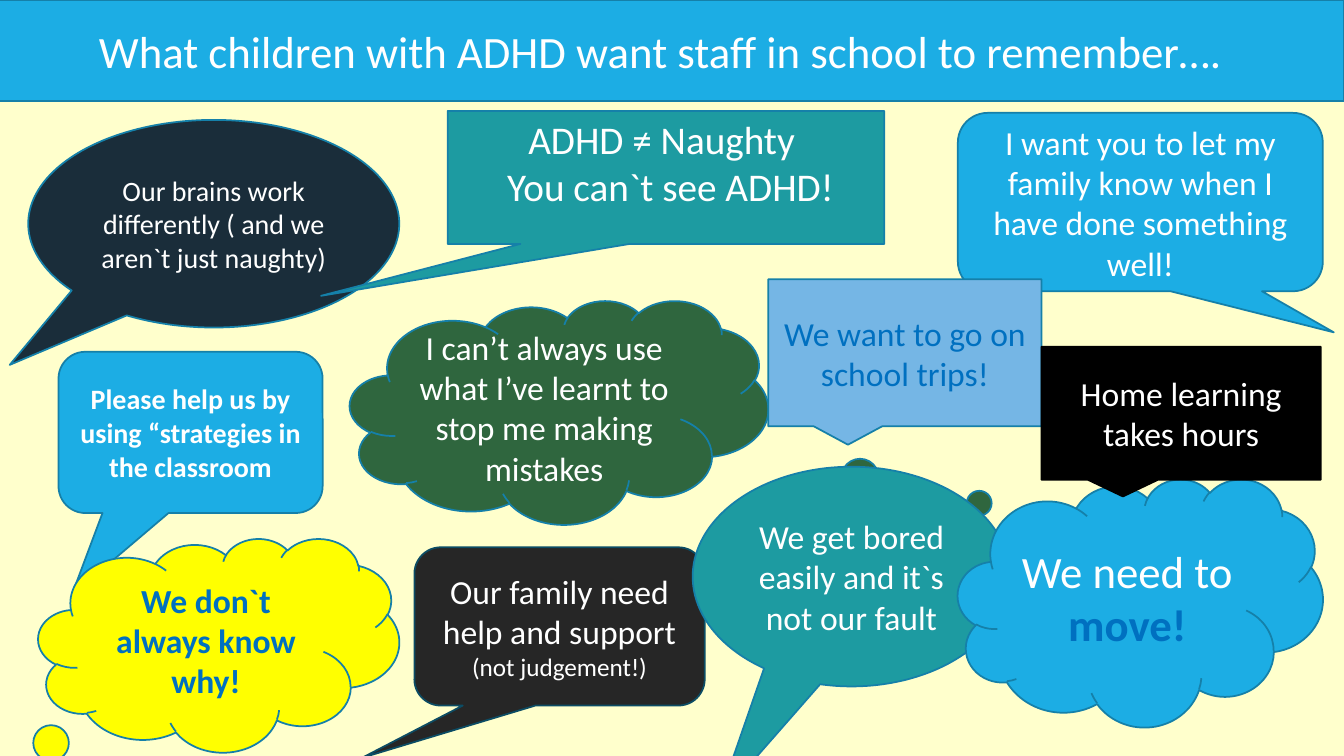
from pptx import Presentation
from pptx.dml.color import RGBColor
from pptx.enum.shapes import MSO_SHAPE
from pptx.enum.text import MSO_ANCHOR, PP_ALIGN
from pptx.util import Inches, Pt

RECTANGLE = MSO_SHAPE.RECTANGLE
BOX_CALLOUT = MSO_SHAPE.RECTANGULAR_CALLOUT
ROUND_CALLOUT = MSO_SHAPE.ROUNDED_RECTANGULAR_CALLOUT
OVAL_CALLOUT = MSO_SHAPE.OVAL_CALLOUT
CLOUD_CALLOUT = MSO_SHAPE.CLOUD_CALLOUT
CENTER = PP_ALIGN.CENTER
MIDDLE = MSO_ANCHOR.MIDDLE

CREAM = RGBColor(0xFF, 0xFF, 0xCC)
WHITE = RGBColor(0xFF, 0xFF, 0xFF)
BLACK = RGBColor(0x00, 0x00, 0x00)
SKY = RGBColor(0x1C, 0xAD, 0xE4)
OUTLINE = RGBColor(0x15, 0x80, 0xA9)
DARK_OUTLINE = RGBColor(0x0C, 0x4C, 0x64)
NAVY = RGBColor(0x1A, 0x2D, 0x3A)
GREEN = RGBColor(0x2F, 0x66, 0x3E)
TEAL = RGBColor(0x1D, 0x9B, 0xA1)
YELLOW = RGBColor(0xFF, 0xFF, 0x00)
CHARCOAL = RGBColor(0x26, 0x26, 0x26)
PALE_BLUE = RGBColor(0x75, 0xB6, 0xE5)
BLUE = RGBColor(0x00, 0x70, 0xC0)
FONT = "Calibri"


def add_bubble(page, kind, place, fill, tail=(), line=OUTLINE):
    box = page.shapes.add_shape(kind, *(Inches(length) for length in place))
    for index, value in enumerate(tail):
        box.adjustments[index] = value
    box.shadow.inherit = False
    box.fill.solid()
    box.fill.fore_color.rgb = fill
    box.line.color.rgb = line
    box.line.width = Pt(1.25)
    box.text_frame.word_wrap = True
    box.text_frame.vertical_anchor = MIDDLE
    box.text_frame.paragraphs[0].alignment = CENTER
    return box


def add_line(box):
    para = box.text_frame.add_paragraph()
    para.alignment = CENTER
    return para


def write(para, text, size=24, color=WHITE, bold=False):
    span = para.add_run()
    span.text = text
    span.font.name = FONT
    span.font.size = Pt(size)
    span.font.color.rgb = color
    span.font.bold = bold


def add_speech(page, kind, place, fill, text, tail=(), line=OUTLINE, **text_format):
    box = add_bubble(page, kind, place, fill, tail, line)
    write(box.text_frame.paragraphs[0], text, **text_format)
    return box


def main():
    deck = Presentation()
    deck.slide_width = Inches(13.33)
    deck.slide_height = Inches(7.5)
    page = deck.slides.add_slide(deck.slide_layouts[6])
    page.background.fill.solid()
    page.background.fill.fore_color.rgb = CREAM

    add_speech(page, RECTANGLE, (-0.12, 0, 13.45, 1), SKY,
               "What children with ADHD want staff in school to remember…. ", size=32)
    add_speech(page, OVAL_CALLOUT, (0.28, 1.19, 3.68, 2.06), NAVY,
               "Our brains work differently ( and we aren`t just naughty)",
               tail=(-0.55, 0.68), size=20)
    add_speech(page, ROUND_CALLOUT, (0.58, 3.49, 2.62, 1.6), SKY,
               "Please help us by using “strategies in the classroom",
               tail=(-0.45, 1.01), size=20, bold=True)
    add_speech(page, CLOUD_CALLOUT, (3.47, 2.98, 4.15, 2.22), GREEN,
               "I can’t always use what I’ve learnt to stop me making mistakes",
               tail=(1.26, 0.51))
    add_speech(page, ROUND_CALLOUT, (9.5, 1.12, 3.62, 1.77), SKY,
               "I want you to let my family know when I have done something well!",
               tail=(0.53, 0.73))

    naughty = add_speech(page, BOX_CALLOUT, (4.44, 1.1, 4.33, 1.32), TEAL,
                         "ADHD ≠ Naughty ", tail=(-0.79, 0.89), size=28)
    write(add_line(naughty), " You can`t see ADHD!", size=28)
    naughty.text_frame.margin_bottom = Inches(0.35)

    add_speech(page, CLOUD_CALLOUT, (0.38, 5.34, 3.58, 2.12), YELLOW,
               "We don`t always know why!", tail=(-0.71, 0.7), color=BLUE, bold=True)

    family = add_speech(page, ROUND_CALLOUT, (4.11, 5.43, 2.88, 1.57), CHARCOAL,
                        "Our family need help and support",
                        tail=(-0.68, 0.83), line=DARK_OUTLINE)
    write(add_line(family), "(not judgement!)", size=18)

    add_speech(page, BOX_CALLOUT, (7.62, 2.77, 2.71, 1.46), PALE_BLUE,
               "We want to go on school trips!", color=BLUE)
    add_speech(page, OVAL_CALLOUT, (6.87, 4.63, 3.15, 2.18), TEAL,
               "We get bored easily and it`s not our fault", tail=(-0.42, 1.02))

    move = add_speech(page, CLOUD_CALLOUT, (9.5, 4.75, 3.62, 2.46), SKY,
                      "We need to ", tail=(-0.88, 1.59), size=32)
    write(move.text_frame.paragraphs[0], "move!", size=32, color=BLUE, bold=True)

    add_speech(page, BOX_CALLOUT, (10.33, 3.44, 2.77, 1.32), BLACK,
               "Home learning takes hours", line=BLACK)
    deck.save("out.pptx")


if __name__ == "__main__":
    main()
